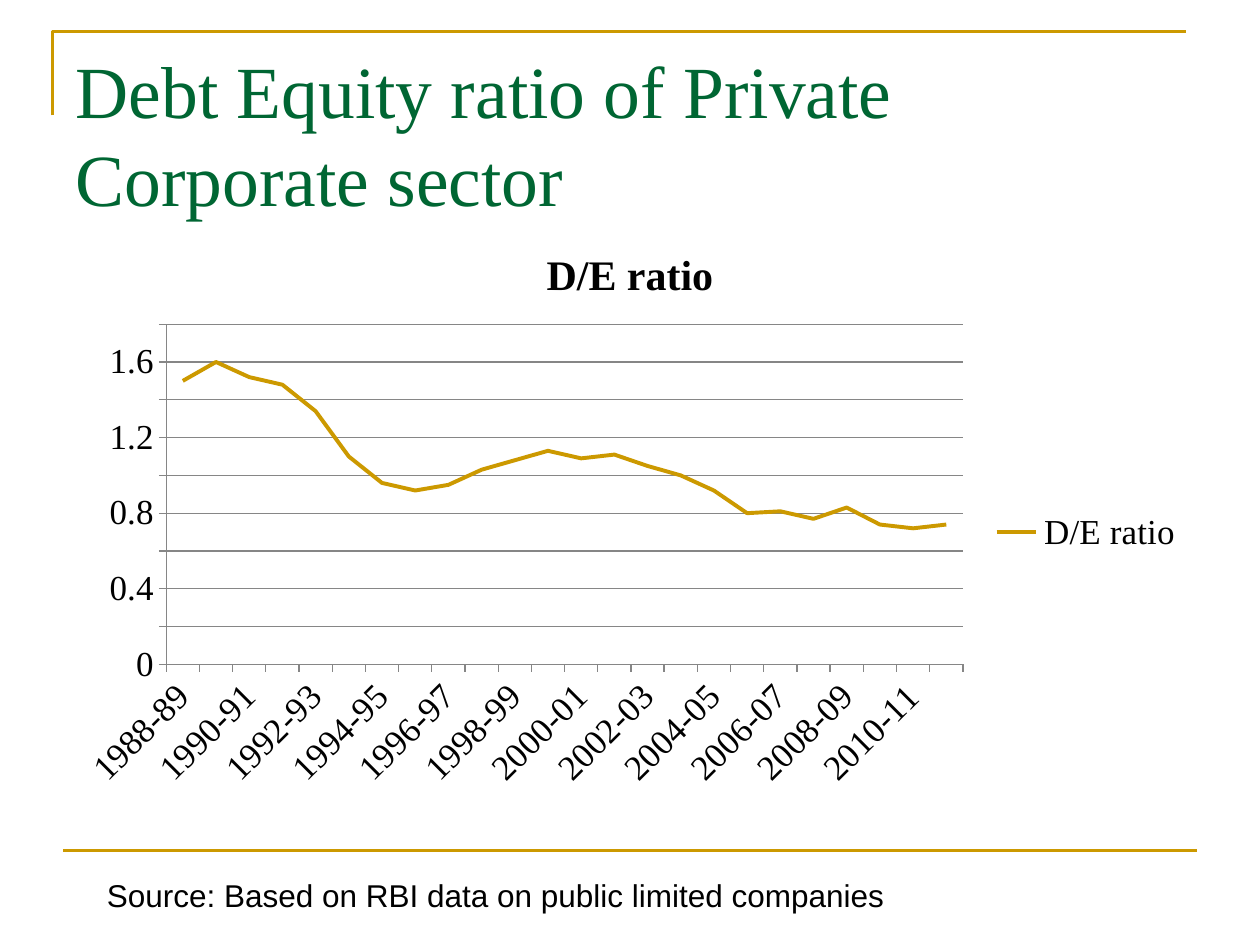
from pptx import Presentation
from pptx.chart.data import CategoryChartData
from pptx.dml.color import RGBColor
from pptx.enum.chart import XL_CHART_TYPE, XL_LEGEND_POSITION, XL_TICK_MARK
from pptx.enum.shapes import MSO_CONNECTOR
from pptx.enum.text import MSO_ANCHOR, MSO_AUTO_SIZE, PP_ALIGN
from pptx.oxml import parse_xml
from pptx.oxml.ns import nsdecls
from pptx.util import Pt
from lxml.etree import SubElement

GOLD, GREEN, BLACK, GREY = "CC9900", "006633", "000000", "868686"
SERIF, SANS = "Times New Roman", "Arial"
RATIOS = [1.5, 1.6, 1.52, 1.48, 1.34, 1.1, 0.96, 0.92, 0.95, 1.03, 1.08, 1.13,
          1.09, 1.11, 1.05, 1, 0.92, 0.8, 0.81, 0.77, 0.83, 0.74, 0.72, 0.74]
YEARS = [f"{year}-{(year + 1) % 100:02d}" for year in range(1988, 1988 + len(RATIOS))]
CHART_WIDTH, CHART_HEIGHT = 648, 356.4
PLOT_LAYOUT = {"x": 59 / CHART_WIDTH, "y": 59.3 / CHART_HEIGHT,
               "w": 455.3 / CHART_WIDTH, "h": 194.4 / CHART_HEIGHT}


def color(value):
    """Return the colour of a hex string."""
    return RGBColor.from_string(value)


def set_values(target, values):
    """Set each named attribute on the target."""
    for name, value in values.items():
        setattr(target, name, value)


def style_font(font, name, size, hex_color, bold=False):
    """Set typeface, size, weight and colour."""
    set_values(font, {"name": name, "size": Pt(size), "bold": bold})
    font.color.rgb = color(hex_color)


def style_line(line, hex_color, width):
    """Set colour and width of a line."""
    line.color.rgb = color(hex_color)
    line.width = Pt(width)


def place(shape, left, top, width, height):
    """Move and size a shape in points."""
    set_values(shape, {"left": Pt(left), "top": Pt(top),
                       "width": Pt(width), "height": Pt(height)})


def add_corner_rule(slide):
    """Draw the bent rule around the top left corner."""
    builder = slide.shapes.build_freeform(Pt(30), Pt(66))
    builder.add_line_segments([(Pt(30), Pt(18)), (Pt(678), Pt(18))], close=False)
    corner = builder.convert_to_shape()
    corner.shadow.inherit = False
    corner.fill.background()
    style_line(corner.line, GOLD, 1.5)


def add_footer_rule(slide):
    """Draw the straight rule above the source."""
    rule = slide.shapes.add_connector(
        MSO_CONNECTOR.STRAIGHT, Pt(36), Pt(486), Pt(684), Pt(486))
    style_line(rule.line, GOLD, 1.5)
    rule._element.spPr.append(parse_xml(f"<a:effectLst {nsdecls('a')}/>"))


def write_title(slide, text):
    """Fill and format the title placeholder."""
    title = slide.shapes.title
    place(title, 36, 22, 648, 90)
    frame = title.text_frame
    frame.text = text
    set_values(frame, {"word_wrap": True, "auto_size": MSO_AUTO_SIZE.NONE,
                       "vertical_anchor": MSO_ANCHOR.TOP})
    paragraph = frame.paragraphs[0]
    set_values(paragraph, {"alignment": PP_ALIGN.LEFT, "line_spacing": 1.0})
    style_font(paragraph.runs[0].font, SERIF, 42, GREEN)


def fix_plot_area(chart):
    """Pin the inner plot area to fractions of the chart."""
    plot_area = chart._chartSpace.chart.plotArea
    for old_layout in plot_area.findall("{*}layout"):
        plot_area.remove(old_layout)
    layout = parse_xml(f"<c:layout {nsdecls('c')}><c:manualLayout/></c:layout>")
    settings = {"layoutTarget": "inner", "xMode": "edge", "yMode": "edge", **PLOT_LAYOUT}
    namespace = layout.nsmap["c"]
    for tag, value in settings.items():
        SubElement(layout[0], f"{{{namespace}}}{tag}").set("val", str(value))
    plot_area.insert(0, layout)


def format_axes(chart):
    """Format both axes and the gridlines."""
    for axis in (chart.category_axis, chart.value_axis):
        axis.major_tick_mark = XL_TICK_MARK.OUTSIDE
        style_line(axis.format.line, GREY, 0.75)
        style_font(axis.tick_labels.font, SERIF, 20, BLACK)
    labels = chart.category_axis._element.find("{*}txPr")
    labels.bodyPr.set("rot", "-2700000")
    values = chart.value_axis
    set_values(values, {"minimum_scale": 0, "maximum_scale": 1.8, "major_unit": 0.2,
                        "has_major_gridlines": True})
    set_values(values.tick_labels, {"number_format": "General",
                                    "number_format_is_linked": False})
    style_line(values.major_gridlines.format.line, GREY, 0.75)


def add_ratio_chart(slide, name):
    """Add the line chart of yearly ratios."""
    data = CategoryChartData()
    data.categories = YEARS
    data.add_series(name, RATIOS)
    chart = slide.shapes.add_chart(XL_CHART_TYPE.LINE, Pt(36), Pt(126),
                                   Pt(CHART_WIDTH), Pt(CHART_HEIGHT), data).chart
    style_font(chart.font, SERIF, 20, BLACK)
    set_values(chart, {"has_title": True, "has_legend": True})
    heading = chart.chart_title.text_frame
    heading.text = name
    style_font(heading.paragraphs[0].runs[0].font, SERIF, 24, BLACK, bold=True)
    set_values(chart.legend, {"position": XL_LEGEND_POSITION.RIGHT,
                              "include_in_layout": False})
    style_font(chart.legend.font, SERIF, 20, BLACK)
    chart.plots[0].vary_by_categories = False
    ratio_line = chart.plots[0].series[0]
    ratio_line.smooth = False
    style_line(ratio_line.format.line, GOLD, 2.25)
    format_axes(chart)
    fix_plot_area(chart)


def add_source(slide, text):
    """Add the source note under the chart."""
    source = slide.shapes.add_textbox(Pt(54), Pt(496.8), Pt(538.56), Pt(28.8))
    frame = source.text_frame
    set_values(frame, {"text": text, "word_wrap": True,
                       "auto_size": MSO_AUTO_SIZE.SHAPE_TO_FIT_TEXT})
    style_font(frame.paragraphs[0].runs[0].font, SANS, 18, BLACK)


def main():
    """Build and save the slide."""
    deck = Presentation()
    set_values(deck, {"slide_width": Pt(720), "slide_height": Pt(540)})
    slide = deck.slides.add_slide(deck.slide_layouts[5])
    add_corner_rule(slide)
    add_footer_rule(slide)
    write_title(slide, "Debt Equity ratio of Private Corporate sector")
    add_ratio_chart(slide, "D/E ratio")
    add_source(slide, "Source: Based on RBI data on public limited companies")
    deck.save("out.pptx")


if __name__ == "__main__":
    main()
